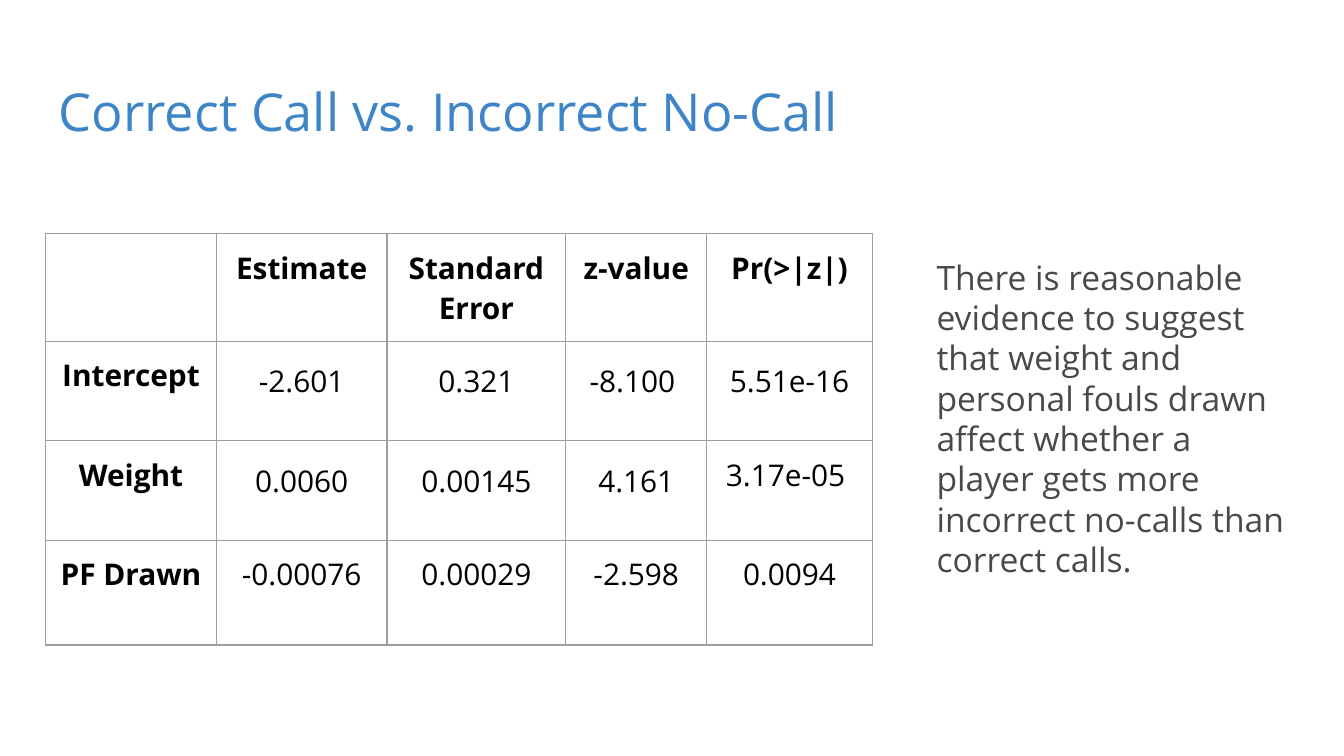
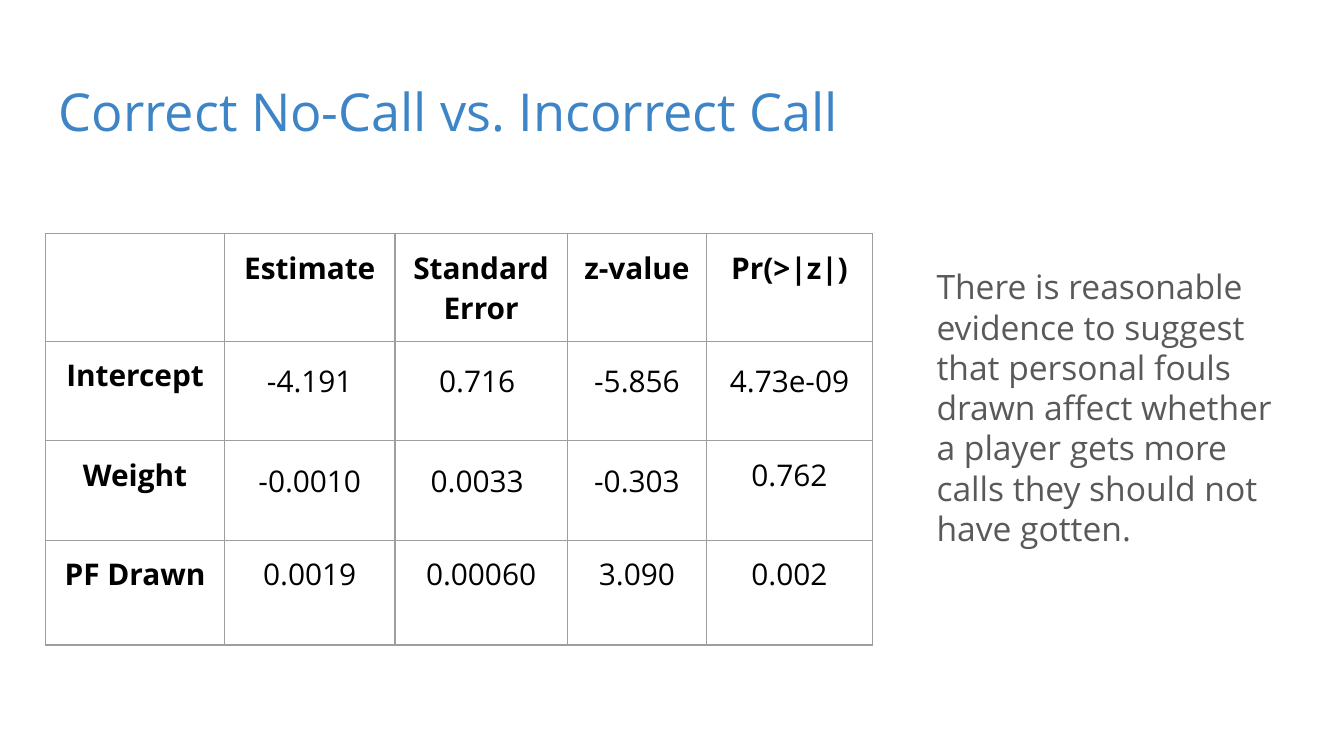
import pptx
import pptx.util
import pptx.dml.color
import pptx.enum.text
import pptx.oxml
import pptx.oxml.ns

Inches = pptx.util.Inches
Pt = pptx.util.Pt
RGBColor = pptx.dml.color.RGBColor

BLUE = RGBColor(0x3D, 0x85, 0xC6)
BLACK = RGBColor(0, 0, 0)
DARK = RGBColor(0x48, 0x49, 0x4A)
GRAY = RGBColor(0x59, 0x59, 0x59)
RULE = RGBColor(0x9E, 0x9E, 0x9E)
FONT = "Open Sans"
HEADS = ["", "Estimate", "Standard Error", "z-value", "Pr(>|z|)"]
ROWS = [0.8, 0.74, 0.74, 0.78]

SLIDES = [
    {
        "title": "Correct Call vs. Incorrect No-Call",
        "cols": [1.27, 1.27, 1.33, 1.05, 1.23],
        "rows": [
            ["Intercept", "-2.601", "0.321", "-8.100 ", "5.51e-16"],
            ["Weight", "0.0060", "0.00145", "4.161", "3.17e-05 "],
            ["PF Drawn", "-0.00076", "0.00029", "-2.598", "0.0094"],
        ],
        "note": "There is reasonable evidence to suggest that weight and personal "
                "fouls drawn affect whether a player gets more incorrect no-calls "
                "than correct calls.",
        "top": 1.81,
        "color": DARK,
    },
    {
        "title": "Correct No-Call vs. Incorrect Call",
        "cols": [1.33, 1.27, 1.28, 1.04, 1.23],
        "rows": [
            ["Intercept", "-4.191", "0.716 ", "-5.856", "4.73e-09"],
            ["Weight", "-0.0010", "0.0033 ", "-0.303", "0.762"],
            ["PF Drawn", "0.0019", "0.00060", "3.090", "0.002"],
        ],
        "note": "There is reasonable evidence to suggest that personal fouls drawn "
                "affect whether a player gets more calls they should not have gotten.",
        "top": 1.88,
        "color": GRAY,
    },
]


class Deck:
    """Hold the shared style and the current slide."""

    def __init__(self):
        self.prs = pptx.Presentation()
        self.prs.slide_width = Inches(10)
        self.prs.slide_height = Inches(10 * 9 / 16)
        self.slide = None

    def add(self):
        self.slide = self.prs.slides.add_slide(self.prs.slide_layouts[6])

    def style(self, para, size, color, bold=False):
        for run in para.runs:
            run.font.name = FONT
            run.font.size = Pt(size)
            run.font.color.rgb = color
            run.font.bold = bold

    def inset(self, item):
        item.margin_left = item.margin_right = Inches(0.1)
        item.margin_top = item.margin_bottom = Inches(0.1)

    def text(self, words, box, size, color):
        frame = self.slide.shapes.add_textbox(*map(Inches, box)).text_frame
        frame.word_wrap = True
        self.inset(frame)
        frame.text = words
        self.style(frame.paragraphs[0], size, color)

    def title(self, words):
        self.text(words, (0.34, 0.49, 9.32, 0.63), 28, BLUE)

    def note(self, words, top, color):
        self.text(words, (6.87, top, 2.79, 2.88), 18, color)

    def border(self, cell):
        props = cell._tc.get_or_add_tcPr()
        for side in ("lnL", "lnR", "lnT", "lnB"):
            props.append(pptx.oxml.parse_xml(
                f'<a:{side} {pptx.oxml.ns.nsdecls("a")} w="{Pt(0.75)}">'
                f'<a:solidFill><a:srgbClr val="{RULE}"/></a:solidFill></a:{side}>'))

    def cell(self, cell, words, bold, loose):
        self.inset(cell)
        self.border(cell)
        cell.fill.background()
        cell.text = words
        para = cell.text_frame.paragraphs[0]
        para.alignment = pptx.enum.text.PP_ALIGN.CENTER
        if loose:
            para.line_spacing = 1.15
            para.space_after = Pt(16)
        self.style(para, 16, BLACK, bold)

    def table(self, data, cols):
        table = self.slide.shapes.add_table(
            len(data), len(cols), Inches(0.34), Inches(1.74),
            Inches(sum(cols)), Inches(sum(ROWS))).table
        table.first_row = table.horz_banding = False
        for col, width in zip(table.columns, cols):
            col.width = Inches(width)
        for row, height in zip(table.rows, ROWS):
            row.height = Inches(height)
        for r, line in enumerate(data):
            for c, words in enumerate(line):
                loose = r in (1, 2) and c > 0 and (r, c) != (2, 4)
                self.cell(table.cell(r, c), words, r == 0 or c == 0, loose)


def main():
    deck = Deck()
    for page in SLIDES:
        deck.add()
        deck.title(page["title"])
        deck.table([HEADS] + page["rows"], page["cols"])
        deck.note(page["note"], page["top"], page["color"])
    deck.prs.save("out.pptx")


if __name__ == "__main__":
    main()
